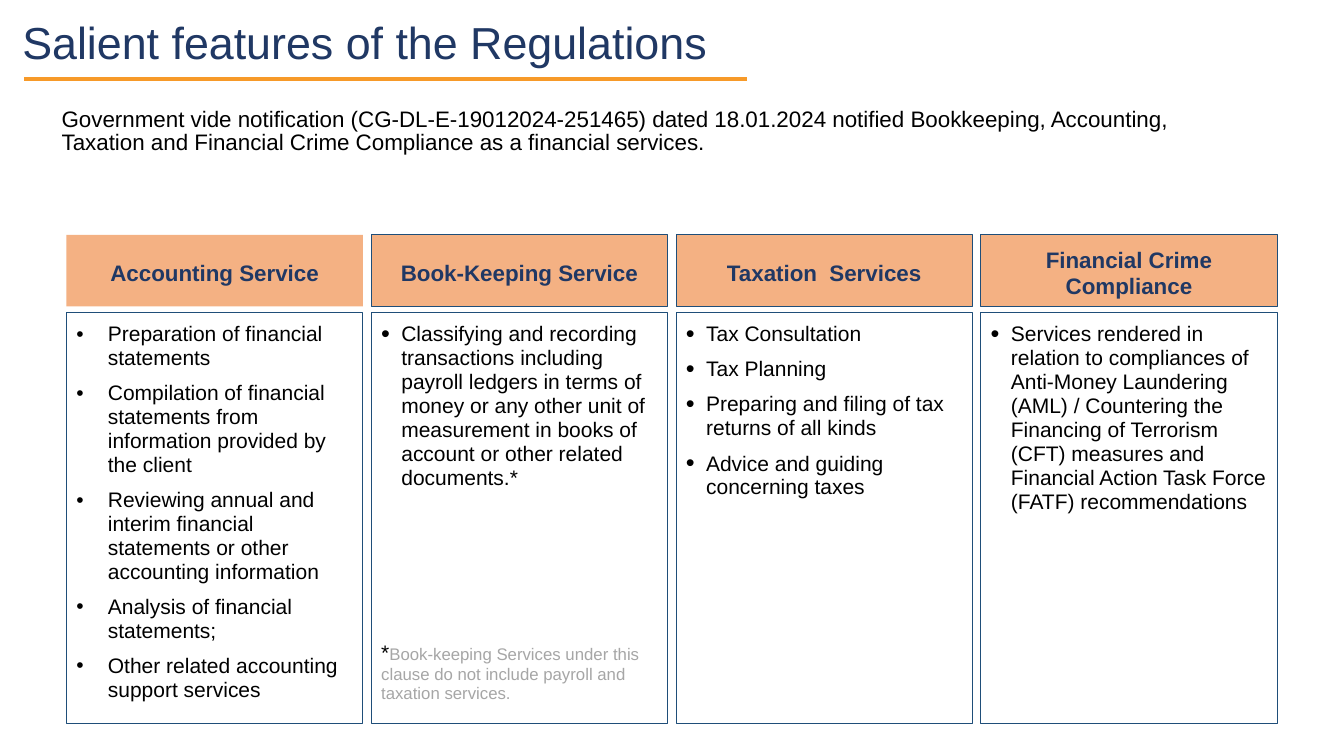
"""Build the slide on the salient features of the Regulations."""
from lxml import etree
from pptx import Presentation
from pptx.dml.color import RGBColor
from pptx.enum.shapes import MSO_CONNECTOR, MSO_SHAPE
from pptx.enum.text import MSO_ANCHOR, MSO_AUTO_SIZE, PP_ALIGN
from pptx.oxml.ns import qn
from pptx.util import Pt

COLOURS = {
    "navy": "203864", "orange": "F79A29", "peach": "F4B183", "border": "1F4E79",
    "white": "FFFFFF", "black": "000000", "grey": "A6A6A6",
}
COLOURS = {name: RGBColor.from_string(value) for name, value in COLOURS.items()}

SERVICES = [
    ("Accounting Service", [
        "Preparation of financial statements",
        "Compilation of financial statements from information provided by the client",
        "Reviewing annual and interim financial statements or other accounting information",
        "Analysis of financial statements;",
        "Other related accounting support services",
    ]),
    ("Book-Keeping Service", [
        "Classifying and recording transactions including payroll ledgers in terms of "
        "money or any other unit of measurement in books of account or other related "
        "documents.*",
    ]),
    ("Taxation  Services", [
        "Tax Consultation",
        "Tax Planning",
        "Preparing and filing of tax returns of all kinds",
        "Advice and guiding concerning taxes",
    ]),
    ("Financial Crime Compliance", [
        "Services rendered in relation to compliances of Anti-Money Laundering (AML) / "
        "Countering the Financing of Terrorism (CFT) measures and Financial Action Task "
        "Force (FATF) recommendations",
    ]),
]
COLUMN_LEFT, COLUMN_STEP, COLUMN_WIDTH = 47.5, 217.7, 211.7


def add_panel(left, top, width, height, fill, border, anchor, insets):
    """Add a rectangle that is ready for text and return it."""
    panel = slide.shapes.add_shape(
        MSO_SHAPE.RECTANGLE, Pt(left), Pt(top), Pt(width), Pt(height))
    panel.shadow.inherit = False
    panel.fill.solid()
    panel.fill.fore_color.rgb = COLOURS[fill]
    if border:
        panel.line.color.rgb = COLOURS[border]
        panel.line.width = Pt(0.75)
    else:
        panel.line.fill.background()
    frame = panel.text_frame
    frame.word_wrap = True
    frame.vertical_anchor = anchor
    frame.margin_left = frame.margin_top = frame.margin_right = Pt(insets)
    frame.margin_bottom = Pt(2.9)
    return panel


def format_paragraph(paragraph, size, colour, spacing, after, align=PP_ALIGN.LEFT, bold=False):
    """Set the font, spacing and alignment of a paragraph."""
    paragraph.alignment = align
    paragraph.line_spacing = spacing
    paragraph.space_before = Pt(0)
    paragraph.space_after = Pt(after)
    paragraph.font.name = "Arial"
    paragraph.font.size = Pt(size)
    paragraph.font.bold = bold
    paragraph.font.color.rgb = COLOURS[colour]


prs = Presentation()
prs.slide_width, prs.slide_height = Pt(960), Pt(540)
slide = prs.slides.add_slide(prs.slide_layouts[5])

title = slide.shapes.title
title.left, title.top, title.width, title.height = Pt(6.5), Pt(7.2), Pt(921), Pt(58.3)
heading = title.text_frame
heading.text = "Salient features of the Regulations"
heading.word_wrap = True
heading.auto_size = MSO_AUTO_SIZE.NONE
heading.vertical_anchor = MSO_ANCHOR.TOP
heading.margin_left = heading.margin_top = heading.margin_right = heading.margin_bottom = Pt(9.4)
format_paragraph(heading.paragraphs[0], 32, "navy", 0.85, 6)

underline = slide.shapes.add_connector(
    MSO_CONNECTOR.STRAIGHT, Pt(17.3), Pt(56.2), Pt(533.5), Pt(56.2))
underline.line.color.rgb = COLOURS["orange"]
underline.line.width = Pt(3)
etree.SubElement(underline.element.spPr, qn("a:effectLst"))

intro = add_panel(38.2, 72, 864.7, 41.8, "white", None, MSO_ANCHOR.MIDDLE, 5.8)
intro.text_frame.text = (
    "Government vide notification (CG-DL-E-19012024-251465) dated 18.01.2024 notified "
    "Bookkeeping, Accounting, Taxation and Financial Crime Compliance as a financial services.")
format_paragraph(intro.text_frame.paragraphs[0], 16, "black", 0.85, 6)

for column, (service, features) in enumerate(SERVICES):
    left = COLUMN_LEFT + column * COLUMN_STEP
    is_first = column == 0
    indent = Pt(22.5 if is_first else 14.4)

    details = add_panel(
        left, 223.2, COLUMN_WIDTH, 293.8, "white", "border", MSO_ANCHOR.TOP, 7.2).text_frame
    details.text = "\n".join(features)
    for feature in details.paragraphs:
        format_paragraph(feature, 15, "black", 0.95, 8)
        properties = feature._p.get_or_add_pPr()
        properties.set("marL", str(indent))
        properties.set("indent", str(-indent))
        bullet_size = etree.Element(qn("a:buSzPct"), val="100000" if is_first else "120000")
        bullet_font = etree.Element(qn("a:buFont"), typeface="Arial")
        bullet = etree.Element(qn("a:buChar"), char="•")
        for part in (bullet_size, bullet_font, bullet):
            properties.find(qn("a:defRPr")).addprevious(part)

    if service == "Book-Keeping Service":
        footnote = details.add_paragraph()
        format_paragraph(footnote, 15, "black", 0.95, 8)
        footnote.space_before = Pt(100)
        footnote.add_run().text = "*"
        exclusion = footnote.add_run()
        exclusion.text = ("Book-keeping Services under this clause do not include "
                          "payroll and taxation services.")
        exclusion.font.size = Pt(12)
        exclusion.font.color.rgb = COLOURS["grey"]

    header = add_panel(left, 167.8, COLUMN_WIDTH, 51.1, "peach",
                       None if is_first else "border", MSO_ANCHOR.MIDDLE, 7.2).text_frame
    header.text = service
    format_paragraph(header.paragraphs[0], 16, "navy", 0.95, 8, PP_ALIGN.CENTER, True)

prs.save("out.pptx")
